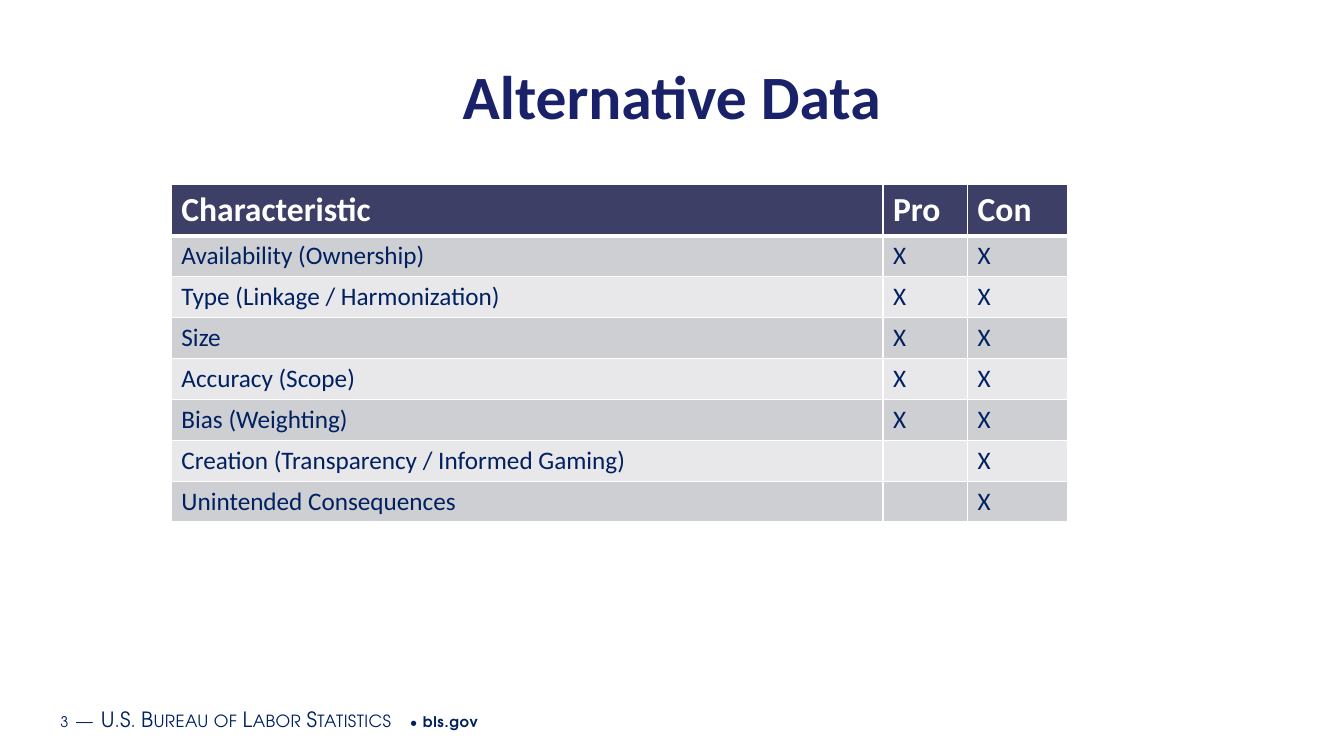
from lxml import etree
from pptx import Presentation
from pptx.dml.color import RGBColor
from pptx.enum.text import MSO_ANCHOR, PP_ALIGN
from pptx.oxml.ns import qn
from pptx.util import Pt

MIDDLE = MSO_ANCHOR.MIDDLE
CENTER = PP_ALIGN.CENTER
COLORS = {"title": "192168", "text": "002060", "head": "3E3F67",
          "dark": "CECFD3", "light": "E8E8EB", "white": "FFFFFF"}


def style(font, name, size, color, bold=False):
    font.name, font.size, font.bold = name, Pt(size), bold
    font.color.rgb = RGBColor.from_string(COLORS[color])


def add_edge(cell, side, width):
    line = etree.SubElement(cell._tc.get_or_add_tcPr(), qn("a:ln" + side),
                            w=str(Pt(width)))
    fill = etree.SubElement(line, qn("a:solidFill"))
    etree.SubElement(fill, qn("a:srgbClr"), val=COLORS["white"])


deck = Presentation()
deck.slide_width, deck.slide_height = Pt(960), Pt(540)
slide = deck.slides.add_slide(deck.slide_layouts[5])

# Title
title = slide.shapes.title
title.left, title.top, title.width, title.height = Pt(39), Pt(36), Pt(882), Pt(63)
title.text_frame.text = "Alternative Data"
title.text_frame.vertical_anchor = MIDDLE
head = title.text_frame.paragraphs[0]
head.alignment = CENTER
style(head.font, "Calibri", 44, "title", True)

# Table of pros and cons
rows = [
    ("Characteristic", "Pro", "Con"),
    ("Availability (Ownership)", "X", "X"),
    ("Type (Linkage / Harmonization)", "X", "X"),
    ("Size", "X", "X"),
    ("Accuracy (Scope)", "X", "X"),
    ("Bias (Weighting)", "X", "X"),
    ("Creation (Transparency / Informed Gaming)", "", "X"),
    ("Unintended Consequences", "", "X"),
]
widths = [508.3, 60.5, 71.3]
height = 29.2
table = slide.shapes.add_table(len(rows), len(widths), Pt(122.4), Pt(132),
                               Pt(sum(widths)), Pt(height * len(rows))).table
for col, width in zip(table.columns, widths):
    col.width = Pt(width)
for r, row in enumerate(rows):
    table.rows[r].height = Pt(height)
    shade = "head" if r == 0 else "dark" if r % 2 else "light"
    for c, text in enumerate(row):
        cell = table.cell(r, c)
        for side in "LRTB":
            thick = (r == 0 and side == "B") or (r == 1 and side == "T")
            add_edge(cell, side, 3 if thick else 1)
        cell.fill.solid()
        cell.fill.fore_color.rgb = RGBColor.from_string(COLORS[shade])
        cell.text = text
        font = cell.text_frame.paragraphs[0].font
        if r == 0:
            style(font, "Calibri", 24, "white", True)
        else:
            style(font, "Calibri", 18, "text")

# Footer: text, size, letter spacing in 1/100 pt, small caps, bold
parts = [
    ("3", 10.5, 50, False, False),
    (" ", 16, 50, False, False),
    ("—", 15, 30, True, False),
    (" ", 16, 50, False, False),
    ("U.S. Bureau of Labor Statistics", 15, 30, True, False),
    (" • ", 10.5, 50, False, False),
    ("bls.gov", 10.5, 50, False, True),
]
foot = slide.shapes.add_textbox(Pt(38.2), Pt(499), Pt(610), Pt(28.8)).text_frame
foot.word_wrap = True
foot.vertical_anchor = MIDDLE
foot.margin_left = foot.margin_right = Pt(5)
foot.margin_top = foot.margin_bottom = Pt(2.9)
for text, size, gap, small, bold in parts:
    run = foot.paragraphs[0].add_run()
    run.text = text
    style(run.font, "TeX Gyre Adventor", size, "text", bold)
    props = run._r.get_or_add_rPr()
    props.set("spc", str(gap))
    if small:
        props.set("cap", "small")

deck.save("out.pptx")
